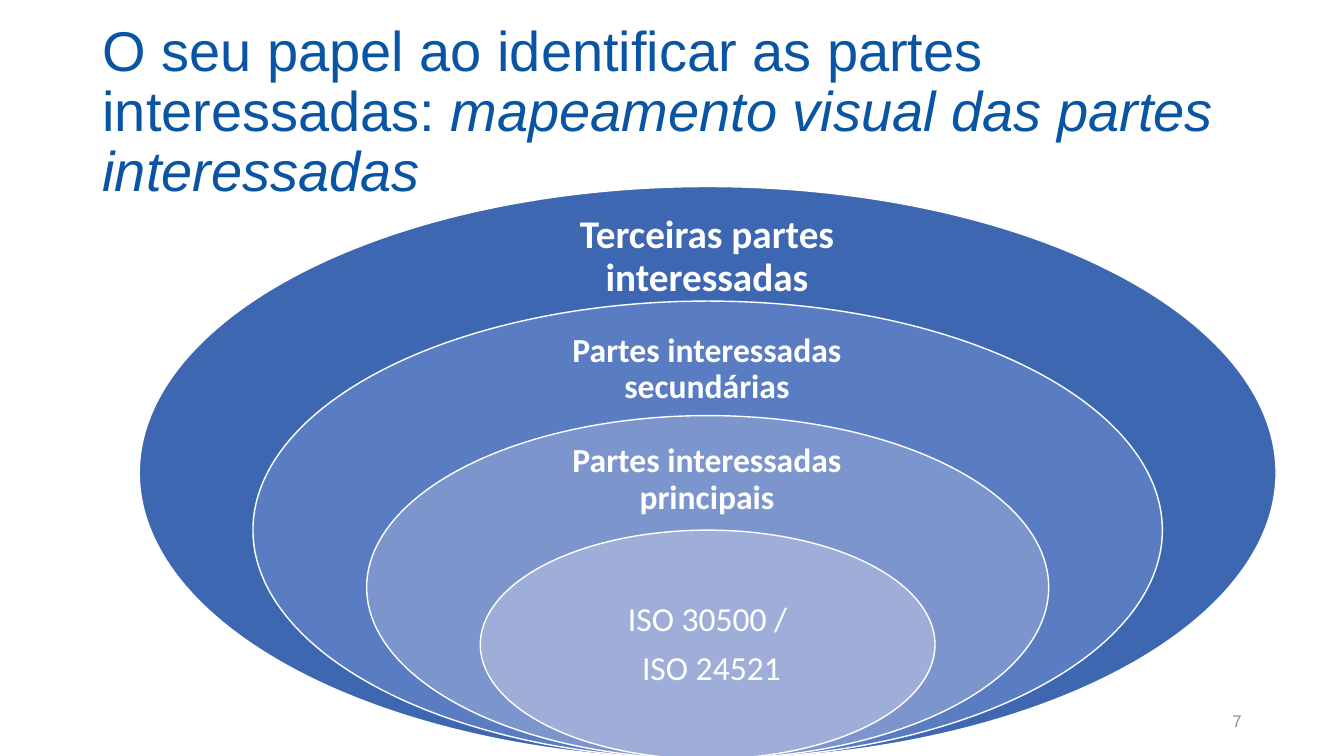
from dataclasses import dataclass

from pptx import Presentation
from pptx.dml.color import RGBColor
from pptx.enum import shapes, text
from pptx.util import Pt


@dataclass(frozen=True)
class Theme:
    title_color: str = "0A55A3"
    number_color: str = "8C8C8C"
    white: str = "FFFFFF"
    rings: tuple = ("3E67B2", "5A7CC3", "7D95CD", "9FAED8")
    title_font: str = "Arial"
    ring_font: str = "Calibri"
    title_size: int = 40
    outer_size: int = 28
    inner_size: int = 24
    number_size: int = 12


THEME = Theme()

TITLE_RUNS = [
    ("O seu papel ao identificar as partes interessadas: ", False),
    ("mapeamento visual das partes interessadas", True),
]

# Each ring: lines, text size, bold, inset, label box (left, top, width, height)
RINGS = [
    (["Terceiras partes interessadas"], THEME.outer_size, True, 15.75,
     (292, 20, 227, 61)),
    (["Partes interessadas secundárias"], THEME.inner_size, True, 13.5,
     (292, 101.5, 227, 59)),
    (["Partes interessadas principais"], THEME.inner_size, True, 13.5,
     (292, 182, 227, 55.5)),
    (["ISO 30500 /", " ISO 24521"], THEME.inner_size, False, 13.5,
     (291, 286.5, 230, 82)),
]


def set_attributes(target, values):
    for name, value in values.items():
        setattr(target, name, value)


def place(shape, box):
    names = ("left", "top", "width", "height")
    set_attributes(shape, {name: Pt(value) for name, value in zip(names, box)})


def format_frame(frame, inset=None):
    values = {"word_wrap": True, "auto_size": text.MSO_AUTO_SIZE.NONE,
              "vertical_anchor": text.MSO_ANCHOR.MIDDLE}
    if inset is not None:
        for side in ("left", "top", "right", "bottom"):
            values[f"margin_{side}"] = Pt(inset)
    set_attributes(frame, values)


def add_run(paragraph, words, name, size, color, bold=False, italic=False):
    run = paragraph.add_run()
    run.text = words
    set_attributes(run.font, {"name": name, "size": Pt(size),
                              "bold": bold, "italic": italic})
    run.font.color.rgb = RGBColor.from_string(color)


def add_title(slide, box):
    title = slide.shapes.title
    place(title, box)
    format_frame(title.text_frame)
    paragraph = title.text_frame.paragraphs[0]
    set_attributes(paragraph, {"alignment": text.PP_ALIGN.LEFT,
                               "line_spacing": 0.9, "space_before": Pt(0)})
    for words, italic in TITLE_RUNS:
        add_run(paragraph, words, THEME.title_font, THEME.title_size,
                THEME.title_color, italic=italic)


def add_ring(slide, box, color):
    ellipse = slide.shapes.add_shape(
        shapes.MSO_SHAPE.OVAL, *(Pt(value) for value in box))
    ellipse.shadow.inherit = False
    ellipse.fill.solid()
    ellipse.fill.fore_color.rgb = RGBColor.from_string(color)
    ellipse.line.color.rgb = RGBColor.from_string(THEME.white)
    ellipse.line.width = Pt(1)


def add_label(slide, box, lines, size, bold, inset):
    label = slide.shapes.add_textbox(*(Pt(value) for value in box))
    frame = label.text_frame
    format_frame(frame, inset)
    for index, words in enumerate(lines):
        paragraph = frame.add_paragraph() if index else frame.paragraphs[0]
        set_attributes(paragraph, {"alignment": text.PP_ALIGN.CENTER,
                                   "line_spacing": 0.9,
                                   "space_after": Pt(0.35 * size)})
        add_run(paragraph, words, THEME.ring_font, size, THEME.white, bold)


def add_stakeholder_map(slide, box):
    left, top, width, height = box
    for index, (lines, size, bold, inset, label_box) in enumerate(RINGS):
        # Each ring shrinks by a fifth and rests on the common bottom point
        scale = 1 - index / 5
        add_ring(slide, (left + width * (1 - scale) / 2,
                         top + height * (1 - scale),
                         width * scale, height * scale), THEME.rings[index])
        x, y, label_width, label_height = label_box
        add_label(slide, (left + x, top + y, label_width, label_height),
                  lines, size, bold, inset)


def add_slide_number(slide, box):
    number = slide.shapes.add_textbox(*(Pt(value) for value in box))
    format_frame(number.text_frame)
    paragraph = number.text_frame.paragraphs[0]
    paragraph.alignment = text.PP_ALIGN.RIGHT
    add_run(paragraph, "7", THEME.title_font, THEME.number_size,
            THEME.number_color)


def main():
    presentation = Presentation()
    set_attributes(presentation, {"slide_width": Pt(960),
                                  "slide_height": Pt(540)})
    slide = presentation.slides.add_slide(presentation.slide_layouts[5])
    add_title(slide, (66, 28.75, 828, 104.5))
    add_slide_number(slide, (678, 500.5, 216, 28.75))
    add_stakeholder_map(slide, (99.5, 133.25, 812, 409))
    presentation.save("out.pptx")


if __name__ == "__main__":
    main()
